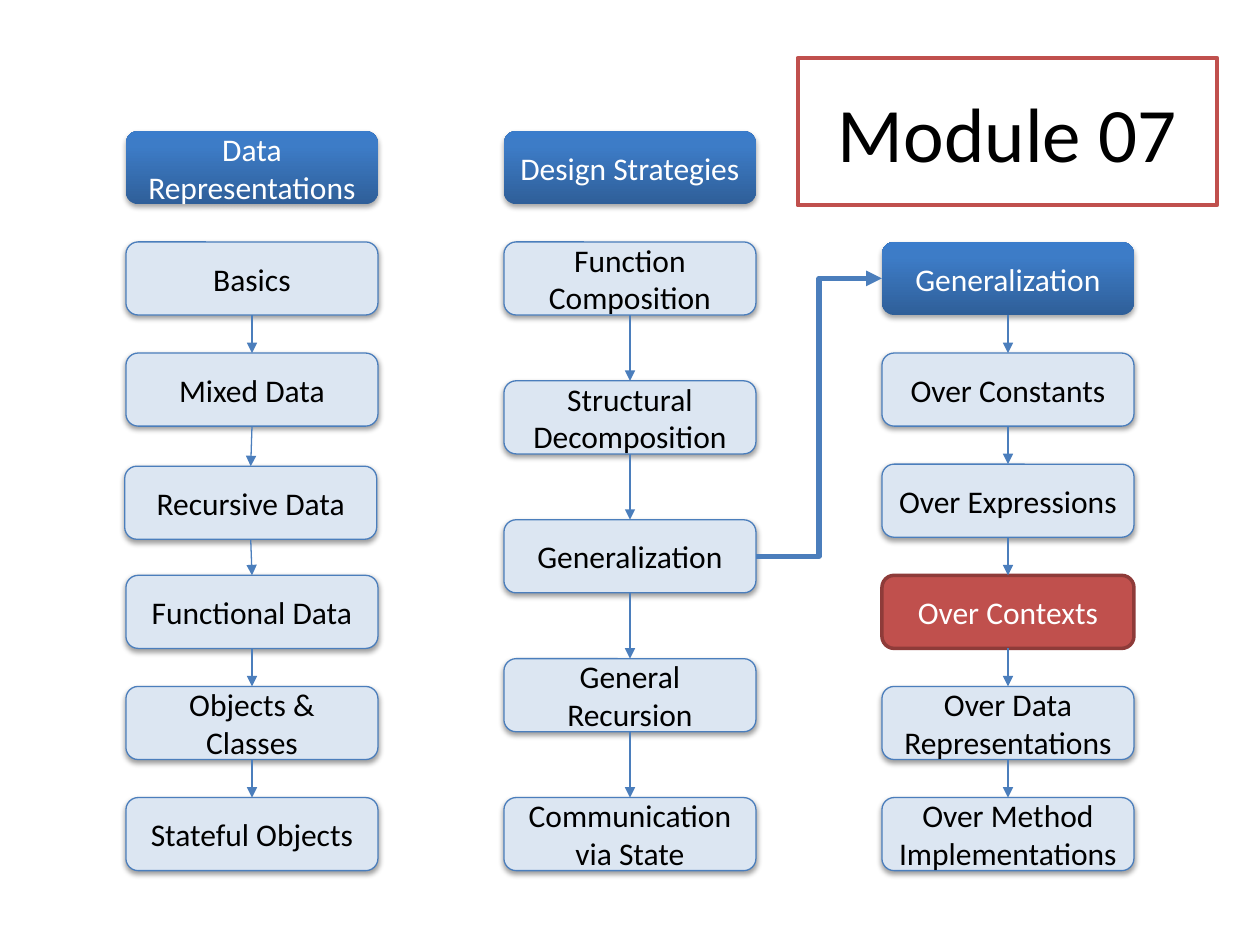
"""Build the Module 07 roadmap slide with three columns of linked topics."""
from copy import deepcopy

from pptx import Presentation
from pptx.dml.color import RGBColor
from pptx.enum.shapes import MSO_CONNECTOR, MSO_SHAPE
from pptx.enum.text import MSO_ANCHOR, PP_ALIGN
from pptx.oxml import parse_xml
from pptx.oxml.ns import nsdecls, qn
from pptx.util import Inches, Pt

ROUNDED = MSO_SHAPE.ROUNDED_RECTANGLE
STRAIGHT, ELBOW = MSO_CONNECTOR.STRAIGHT, MSO_CONNECTOR.ELBOW
CENTER, MIDDLE = PP_ALIGN.CENTER, MSO_ANCHOR.MIDDLE
color = RGBColor.from_string

BOX_WIDTH, BOX_HEIGHT = 2, 0.58
FIRST_TOP, LAST_TOP = 1.92, 6.33
BLUE, PALE, RED, DARK_RED = "4B7EBC", "DCE6F2", "C0504D", "8E3B39"
HEADER_STOPS = [(0, "2F5F99"), (0.8, "3D7CC7"), (1, "3A7CCB")]
HIGHLIGHT = "Over Contexts"
COLUMNS = [
    (1, 1.04, "Data Representations",
     ["Basics", "Mixed Data", "Recursive Data", "Functional Data",
      "Objects & Classes", "Stateful Objects"]),
    (4, 1.04, "Design Strategies",
     ["Function Composition", "Structural Decomposition", "Generalization",
      "General Recursion", "Communication via State"]),
    (7, FIRST_TOP, "Generalization",
     ["Over Constants", "Over Expressions", HIGHLIGHT,
      "Over Data Representations", "Over Method Implementations"]),
]


def add_box(left, top, text, is_header):
    """Add one topic box in its header, highlighted or plain style."""
    shape = slide.shapes.add_shape(
        ROUNDED, Inches(left), Inches(top), Inches(BOX_WIDTH), Inches(BOX_HEIGHT))
    shape.shadow.inherit = False
    highlighted = text == HIGHLIGHT
    if is_header:
        shape.fill.gradient()
        shape.fill.gradient_angle = 90
        stop_list = shape._element.spPr.find(qn("a:gradFill")).find(qn("a:gsLst"))
        stop_list.insert(1, deepcopy(stop_list[0]))
        for stop, (position, value) in zip(shape.fill.gradient_stops, HEADER_STOPS):
            stop.position = position
            stop.color.rgb = color(value)
        shape.line.fill.background()
    else:
        shape.fill.solid()
        shape.fill.fore_color.rgb = color(RED if highlighted else PALE)
        shape.line.color.rgb = color(DARK_RED if highlighted else BLUE)
        shape.line.width = Pt(2 if highlighted else 0.75)
    if not highlighted:
        distance, alpha = (1.8, 35000) if is_header else (1.6, 38000)
        shape._element.spPr.find(qn("a:effectLst")).append(parse_xml(
            f'<a:outerShdw {nsdecls("a")} blurRad="{Pt(3.1)}" dist="{Pt(distance)}" '
            f'dir="5400000" rotWithShape="0"><a:srgbClr val="000000">'
            f'<a:alpha val="{alpha}"/></a:srgbClr></a:outerShdw>'))
    shape.text_frame.vertical_anchor = MIDDLE
    paragraph = shape.text_frame.paragraphs[0]
    paragraph.alignment = CENTER
    run = paragraph.add_run()
    run.text = text
    run.font.name = "Calibri"
    run.font.size = Pt(18)
    run.font.color.rgb = color("FFFFFF" if is_header or highlighted else "000000")
    return shape


def add_arrow(kind, start, start_site, end, end_site, width):
    """Link two boxes with an arrow glued to their connection sites."""
    connector = slide.shapes.add_connector(kind, 0, 0, 0, 0)
    connector.begin_connect(start, start_site)
    connector.end_connect(end, end_site)
    connector.line.color.rgb = color(BLUE)
    connector.line.width = Pt(width)
    properties = connector._element.spPr
    properties.find(qn("a:ln")).append(
        parse_xml(f'<a:tailEnd {nsdecls("a")} type="triangle"/>'))
    properties.append(parse_xml(f'<a:effectLst {nsdecls("a")}/>'))


presentation = Presentation()
presentation.slide_width, presentation.slide_height = Inches(10), Inches(7.5)
slide = presentation.slides.add_slide(presentation.slide_layouts[5])

title = slide.shapes.title
title.left, title.top = Inches(6.33), Inches(0.46)
title.width, title.height = Inches(3.33), Inches(1.17)
title._element.spPr.append(parse_xml(
    f'<a:prstGeom {nsdecls("a")} prst="roundRect"><a:avLst/></a:prstGeom>'))
title.fill.background()
title.line.color.rgb = color(RED)
title.line.width = Pt(2.25)
title.text_frame.vertical_anchor = MIDDLE
title_paragraph = title.text_frame.paragraphs[0]
title_paragraph.alignment = CENTER
title_run = title_paragraph.add_run()
title_run.text = "Module 07"
title_run.font.name = "Calibri"
title_run.font.size = Pt(44)
title_run.font.color.rgb = color("000000")

column_boxes = []
for left, header_top, header, topics in COLUMNS:
    header_box = add_box(left, header_top, header, True)
    header_in_chain = header_top == FIRST_TOP
    boxes = [header_box] if header_in_chain else []
    offset = len(boxes)
    pitch = (LAST_TOP - FIRST_TOP) / (len(topics) + offset - 1)
    for row, topic in enumerate(topics, offset):
        boxes.append(add_box(left, FIRST_TOP + row * pitch, topic, False))
    if "Recursive Data" in topics:
        recursive_box = boxes[topics.index("Recursive Data")]
        recursive_box.left, recursive_box.top = Inches(0.99), Inches(3.7)
    for upper, lower in zip(boxes, boxes[1:]):
        add_arrow(STRAIGHT, upper, 2, lower, 0, 0.75)
    column_boxes.append(boxes)

add_arrow(ELBOW, column_boxes[1][2], 3, column_boxes[2][0], 1, 3)

presentation.save("out.pptx")
